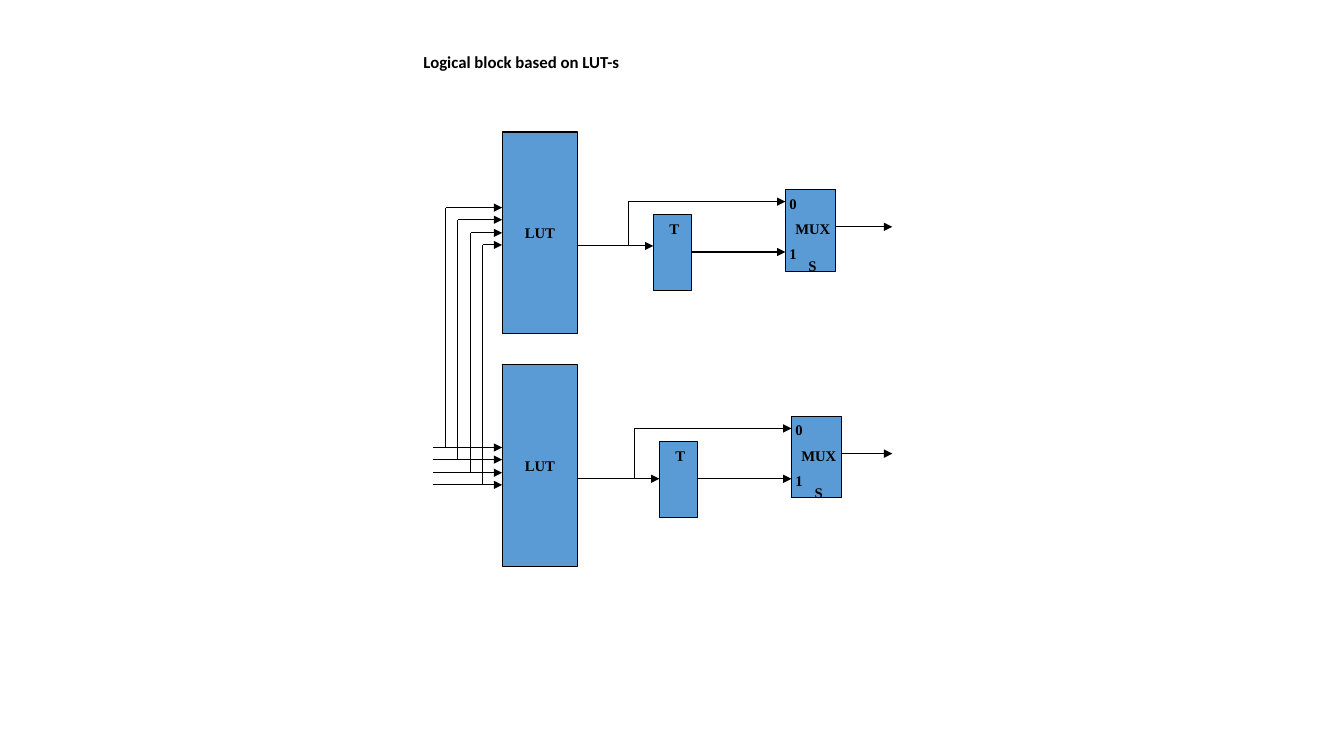
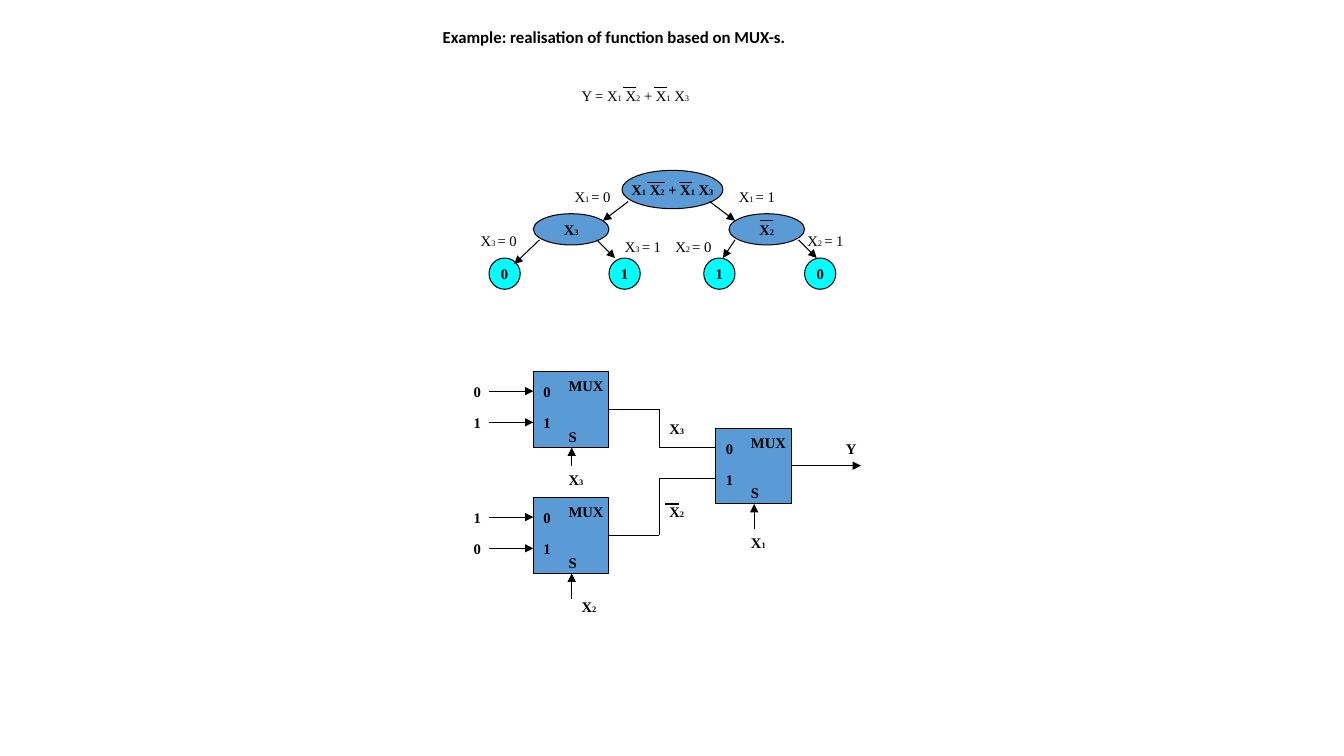
from dataclasses import dataclass
from itertools import pairwise
from typing import Any, NamedTuple

from pptx import Presentation
from pptx.dml.color import RGBColor
from pptx.enum.shapes import MSO_CONNECTOR, MSO_SHAPE
from pptx.enum.text import MSO_ANCHOR, MSO_AUTO_SIZE, PP_ALIGN
from pptx.oxml.ns import qn
from pptx.slide import Slide
from pptx.util import Emu, Pt
from lxml.etree import SubElement

SCALE = 9144  # EMU in one px, 100 px to the inch


@dataclass(frozen=True)
class Theme:
    ink: RGBColor = RGBColor(0, 0, 0)
    block: RGBColor = RGBColor(0x5B, 0x9B, 0xD5)
    leaf: RGBColor = RGBColor(0, 0xFF, 0xFF)
    head: str = "Calibri"
    body: str = "Times New Roman"
    title: Pt = Pt(12)
    text: Pt = Pt(10.5)
    sub: Pt = Pt(6)
    line: Pt = Pt(0.75)


THEME = Theme()


class Spot(NamedTuple):
    x: int
    y: int


@dataclass(frozen=True)
class Label:
    """Text with "|" between plain and small (index) parts."""
    text: str
    x: int
    y: int
    wide: int = 28
    bold: bool = True


@dataclass(frozen=True)
class Node:
    text: str
    x: int
    y: int
    wide: int
    high: int
    fill: RGBColor = THEME.block
    kind: MSO_SHAPE = MSO_SHAPE.OVAL


@dataclass(frozen=True)
class Mux:
    wide: int
    high: int
    marks: tuple[Label, ...]


TALL = Mux(50, 81, (Label("S", 13, 62), Label("MUX", 0, 25, 55),
                    Label("0", -6, 0), Label("1", -6, 50)))
SQUARE = Mux(75, 75, (Label("S", 25, 50), Label("MUX", 25, 0, 55),
                      Label("0", 0, 6), Label("1", 0, 37)))


# Shared drawing tools
def px(n: int) -> Emu:
    return Emu(n * SCALE)


def style(item: Any, values: dict[str, Any]) -> None:
    for name, value in values.items():
        setattr(item, name, value)


def write(para: Any, text: str, bold: bool, size: Pt = THEME.text,
          face: str = THEME.body) -> None:
    for i, part in enumerate(text.split("|")):
        run = para.add_run()
        run.text = part
        style(run.font, {"name": face, "bold": bold,
                         "size": THEME.sub if i % 2 else size})
        run.font.color.rgb = THEME.ink


def title(slide: Slide, text: str, x: int, y: int) -> None:
    shape = slide.shapes.title
    style(shape, {"left": px(x), "top": px(y), "width": px(478), "height": px(125)})
    style(shape.text_frame, {"vertical_anchor": MSO_ANCHOR.MIDDLE, "word_wrap": True,
                             "auto_size": MSO_AUTO_SIZE.NONE})
    para = shape.text_frame.paragraphs[0]
    style(para, {"alignment": PP_ALIGN.LEFT, "line_spacing": 0.9})
    write(para, text, True, THEME.title, THEME.head)


def label(slide: Slide, mark: Label, at: Spot = Spot(0, 0)) -> None:
    box = slide.shapes.add_textbox(px(at.x + mark.x), px(at.y + mark.y),
                                   px(mark.wide), px(28))
    style(box.text_frame, {"word_wrap": False,
                           "auto_size": MSO_AUTO_SIZE.SHAPE_TO_FIT_TEXT})
    write(box.text_frame.paragraphs[0], mark.text, mark.bold)


def block(slide: Slide, node: Node) -> None:
    shape = slide.shapes.add_shape(node.kind, px(node.x), px(node.y),
                                   px(node.wide), px(node.high))
    shape.shadow.inherit = False
    shape.fill.solid()
    shape.fill.fore_color.rgb = node.fill
    shape.line.color.rgb = THEME.ink
    shape.line.width = THEME.line
    if node.text:
        style(shape.text_frame, {"word_wrap": False,
                                 "vertical_anchor": MSO_ANCHOR.MIDDLE})
        para = shape.text_frame.paragraphs[0]
        para.alignment = PP_ALIGN.CENTER
        write(para, node.text, True)


def wire(slide: Slide, *spots: tuple[int, int], arrow: bool = True) -> None:
    """Join the spots with straight lines; an arrow may end the last one."""
    for start, end in pairwise(spots):
        line = slide.shapes.add_connector(MSO_CONNECTOR.STRAIGHT,
                                          *(px(n) for n in (*start, *end)))
        line.line.color.rgb = THEME.ink
        line.line.width = THEME.line
        props = line.element.spPr
        if arrow and end == spots[-1]:
            SubElement(props.find(qn("a:ln")), qn("a:tailEnd"), type="triangle")
        SubElement(props, qn("a:effectLst"))


def bar(slide: Slide, x: int, y: int, wide: int = 13) -> None:
    wire(slide, (x, y), (x + wide, y), arrow=False)


def switch(slide: Slide, mux: Mux, at: Spot) -> None:
    block(slide, Node("", at.x, at.y, mux.wide, mux.high, kind=MSO_SHAPE.RECTANGLE))
    for mark in mux.marks:
        label(slide, mark, at)


# Slide 1: two lookup tables, each with a trigger and a switch
def cell(slide: Slide, top: int, at: Spot) -> None:
    left, right, out = 498, 573, top + 113
    block(slide, Node("LUT", left, top, right - left, 200, kind=MSO_SHAPE.RECTANGLE))
    switch(slide, TALL, at)
    gate = Spot(at.x - 131, at.y + 25)
    block(slide, Node("", *gate, 38, 75, kind=MSO_SHAPE.RECTANGLE))
    label(slide, Label("T", 6, 0, 30), gate)
    fork, high, low, mid = at.x - 156, at.y + 12, at.y + 62, at.y + 37
    wire(slide, (right, out), (gate.x, out))
    wire(slide, (fork, out), (fork, high), (at.x, high))
    wire(slide, (gate.x + 38, low), (at.x, low))
    wire(slide, (at.x + TALL.wide, mid), (885, mid))


def tables(slide: Slide) -> None:
    title(slide, "Logical block based on LUT-s", 410, 0)
    cell(slide, 131, Spot(779, 188))
    cell(slide, 362, Spot(785, 413))
    for i in range(4):
        step = 25 * i // 2
        x, high, low = 442 + step, 206 + step, 444 + step
        wire(slide, (429, low), (498, low))
        wire(slide, (x, low), (x, high), (498, high))


# Slide 2: formula, decision tree and circuit
NODES = (
    Node("X|1| X|2| + X|1| X|3", 617, 169, 100, 38),
    Node("X|3", 529, 212, 75, 31),
    Node("X|2", 723, 212, 75, 31),
    *(Node(text, x, 256, 31, 31, THEME.leaf)
      for text, x in (("0", 485), ("1", 604), ("1", 698), ("0", 798))),
)
EDGES = (
    ((623, 200), (598, 219)), ((704, 200), (729, 219)),
    ((535, 238), (510, 262)), ((592, 238), (610, 256)),
    ((729, 238), (717, 256)), ((792, 238), (810, 256)),
)
TESTS = (("1", "0", 560, 181), ("1", "1", 723, 181), ("3", "0", 467, 225),
         ("3", "1", 610, 231), ("2", "0", 660, 231), ("2", "1", 791, 225))
BARS = ((618, 87), (649, 87), (754, 219), (642, 181, 18), (673, 181), (660, 500))
NAMES = (Label("X|1", 735, 525, 35), Label("X|2", 567, 588, 35),
         Label("X|3", 554, 462, 35), Label("X|2", 654, 494, 35),
         Label("X|3", 654, 412, 35), Label("Y", 829, 431, 31))
WIRES = (  # select inputs, then the output
    ((748, 525), (748, 500)), ((567, 462), (567, 444)),
    ((567, 594), (567, 569)), ((785, 462), (854, 462)),
)


def tree(slide: Slide) -> None:
    label(slide, Label("Y = X|1| X|2| + X|1| X|3", 567, 81, 129, False))
    for node in NODES:
        block(slide, node)
    for edge in EDGES:
        wire(slide, *edge)
    for name, value, x, y in TESTS:
        label(slide, Label(f"X|{name} |= {value}", x, y, 56, False))


def circuit(slide: Slide) -> None:
    switch(slide, SQUARE, Spot(710, 425))
    for y, pins, goal in ((369, "01", 444), (494, "10", 475)):
        at, mid = Spot(529, y), y + 37
        switch(slide, SQUARE, at)
        for pin, drop in zip(pins, (6, 37)):
            label(slide, Label(pin, -69, drop), at)
            wire(slide, (485, y + drop + 13), (at.x, y + drop + 13))
        wire(slide, (604, mid), (654, mid), (654, goal), (710, goal), arrow=False)
    for ends in WIRES:
        wire(slide, *ends)
    for name in NAMES:
        label(slide, name)


def sample(slide: Slide) -> None:
    title(slide, "Example: realisation of function based on MUX-s.", 429, -25)
    tree(slide)
    circuit(slide)
    for spot in BARS:
        bar(slide, *spot)


def main() -> None:
    deck = Presentation()
    style(deck, {"slide_width": px(1333), "slide_height": px(750)})
    for draw in (tables, sample):
        draw(deck.slides.add_slide(deck.slide_layouts[5]))
    deck.save("out.pptx")


if __name__ == "__main__":
    main()
